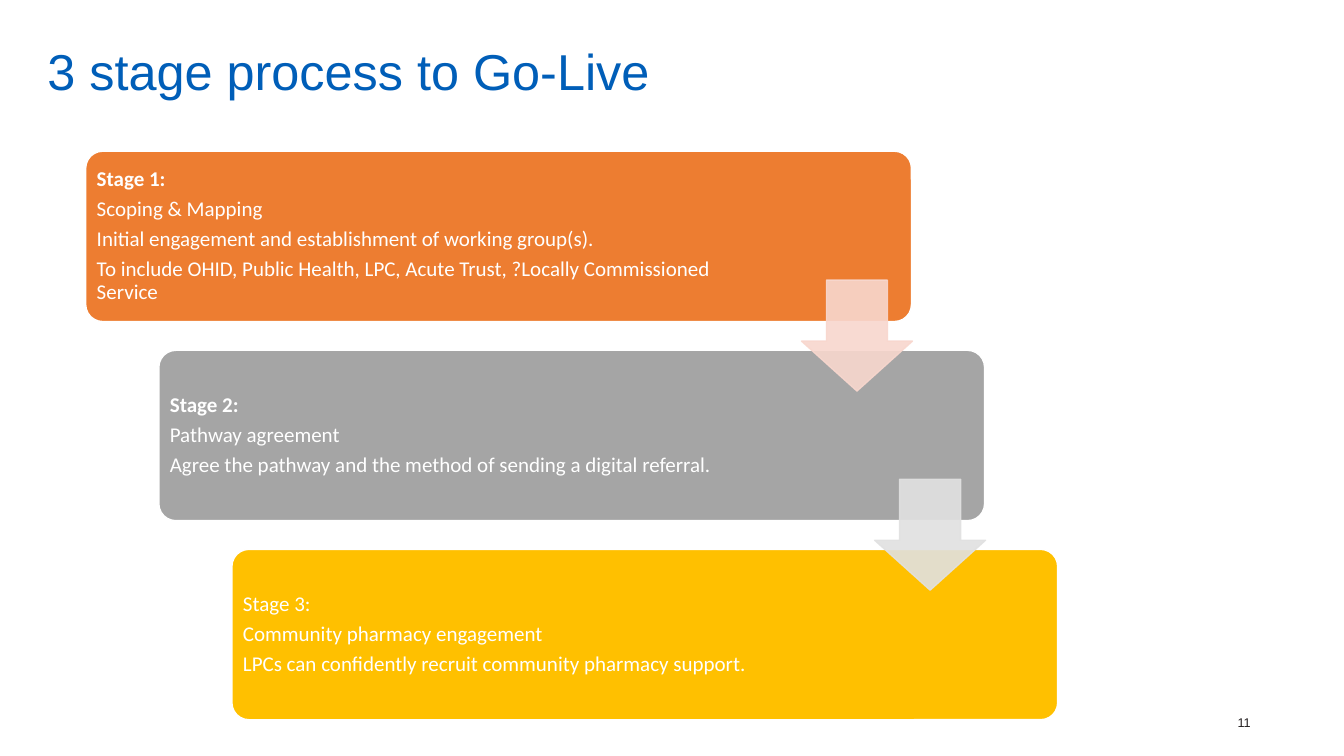
from lxml import etree
from pptx import Presentation
from pptx.dml.color import RGBColor
from pptx.enum.shapes import MSO_SHAPE
from pptx.enum.text import MSO_ANCHOR, PP_ALIGN
from pptx.oxml.ns import qn
from pptx.util import Inches, Pt

ROUNDED, DOWN_ARROW = MSO_SHAPE.ROUNDED_RECTANGLE, MSO_SHAPE.DOWN_ARROW
TOP, MIDDLE = MSO_ANCHOR.TOP, MSO_ANCHOR.MIDDLE
LEFT, CENTER = PP_ALIGN.LEFT, PP_ALIGN.CENTER
COLORS = {
    "title": "005EB8", "number": "231F20", "white": "FFFFFF",
    "orange": "ED7D31", "gray": "A5A5A5", "gold": "FFC000",
    "pale_orange": "F8D7CE", "pale_gray": "E1E1E1",
}
STAGES = [
    ("orange", 6.37, True, [
        "Stage 1:", "Scoping & Mapping",
        "Initial engagement and establishment of working group(s).",
        "To include OHID, Public Health, LPC, Acute Trust, ?Locally Commissioned Service"]),
    ("gray", 6.27, True, [
        "Stage 2:", "Pathway agreement",
        "Agree the pathway and the method of sending a digital referral."]),
    ("gold", 6.27, False, [
        "Stage 3:", "Community pharmacy engagement",
        "LPCs can confidently recruit community pharmacy support."]),
]
STEP_X, STEP_Y = 0.725, 1.975


def write_text(shape, lines, size, color, font="Arial", anchor=TOP, align=LEFT,
               inset=0, spacing=1.0, after=0, bold_first=False):
    frame = shape.text_frame
    frame.word_wrap = True
    frame.vertical_anchor = anchor
    frame.margin_left = frame.margin_right = Inches(inset)
    frame.margin_top = frame.margin_bottom = Inches(inset)
    frame.text = "\n".join(lines)
    for index, paragraph in enumerate(frame.paragraphs):
        paragraph.alignment = align
        paragraph.line_spacing = spacing
        paragraph.space_after = Pt(after)
        run_font = paragraph.runs[0].font
        run_font.name = font
        run_font.size = Pt(size)
        run_font.bold = bold_first and index == 0
        run_font.color.rgb = RGBColor.from_string(COLORS[color])


def add_block(kind, left, top, width, height, fill, line, adjustments):
    shape = slide.shapes.add_shape(
        kind, Inches(left), Inches(top), Inches(width), Inches(height))
    shape.shadow.inherit = False
    shape.fill.solid()
    shape.fill.fore_color.rgb = RGBColor.from_string(COLORS[fill])
    shape.line.color.rgb = RGBColor.from_string(COLORS[line])
    shape.line.width = Pt(1)
    for index, value in enumerate(adjustments):
        shape.adjustments[index] = value
    return shape


presentation = Presentation()
presentation.slide_width = Inches(13.33)
presentation.slide_height = Inches(7.5)
slide = presentation.slides.add_slide(presentation.slide_layouts[5])

title = slide.shapes.title
title.left, title.top = Inches(0.47), Inches(0.47)
title.width, title.height = Inches(9.64), Inches(1.03)
write_text(title, ["3 stage process to Go-Live"], 36, "title", spacing=0.9)

page_number = slide.shapes.add_textbox(
    Inches(12.2), Inches(6.84), Inches(0.28), Inches(0.66))
write_text(page_number, ["11"], 9, "number", anchor=MIDDLE, align=CENTER)

for index, (color, text_width, bold_first, lines) in enumerate(STAGES):
    left, top = 0.85 + index * STEP_X, 1.5 + index * STEP_Y
    add_block(ROUNDED, left, top, 8.19, 1.69, color, "white", [0.1])
    stage_text = slide.shapes.add_textbox(
        Inches(left + 0.05), Inches(top + 0.05), Inches(text_width), Inches(1.59))
    write_text(stage_text, lines, 15, "white", font="Calibri", anchor=MIDDLE,
               inset=0.06, spacing=0.9, after=5.25, bold_first=bold_first)

for index, color in enumerate(["pale_orange", "pale_gray"]):
    arrow = add_block(DOWN_ARROW, 7.95 + index * STEP_X, 2.78 + index * STEP_Y,
                      1.1, 1.1, color, color, [0.55, 0.45])
    for color_element in arrow.element.spPr.iter(qn("a:srgbClr")):
        etree.SubElement(color_element, qn("a:alpha"), val="90000")

presentation.save("out.pptx")
